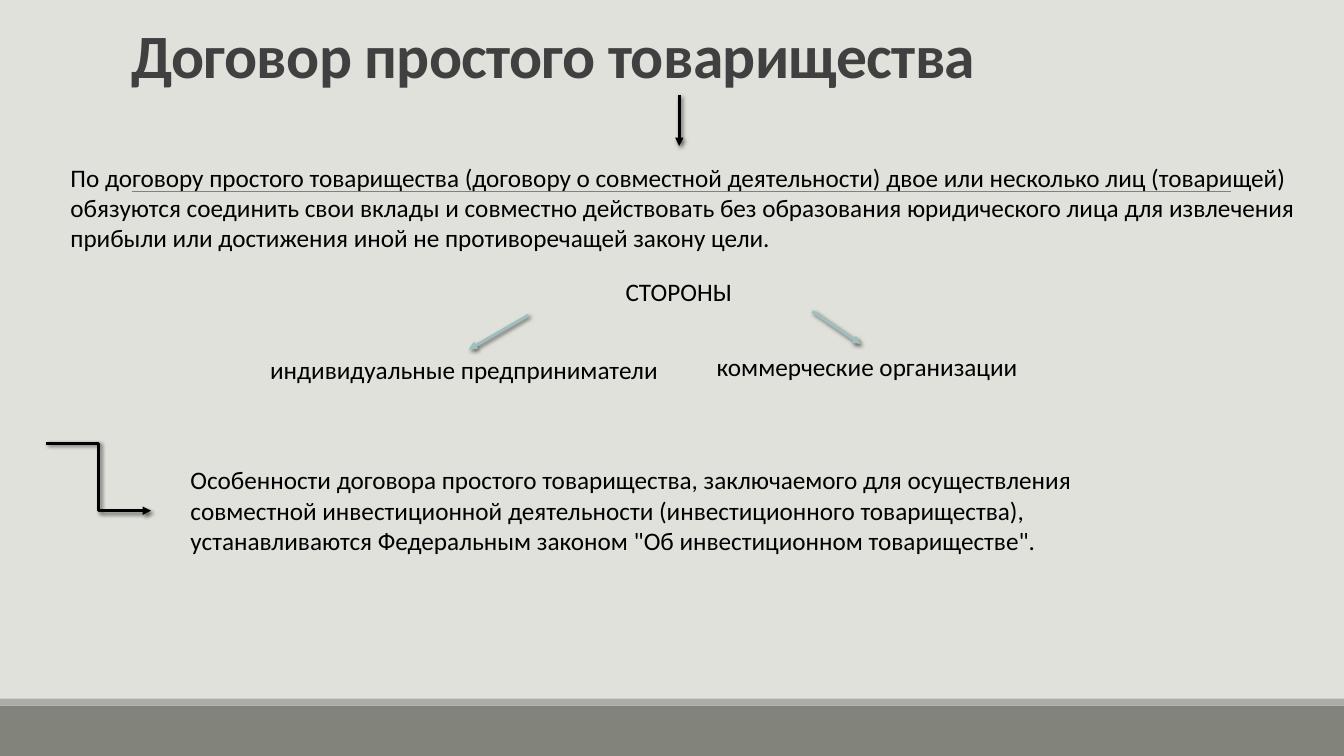
import pptx
import pptx.dml.color
import pptx.enum.shapes
import pptx.enum.text
import pptx.oxml
import pptx.oxml.ns
import pptx.util

Pt = pptx.util.Pt
RGB = pptx.dml.color.RGBColor
CONNECTOR = pptx.enum.shapes.MSO_CONNECTOR
ANCHOR = pptx.enum.text.MSO_ANCHOR
AUTO_SIZE = pptx.enum.text.MSO_AUTO_SIZE

BACKGROUND = RGB(0xE1, 0xE1, 0xDB)
BAND = RGB(0x82, 0x84, 0x7C)
STRIPE = RGB(0xAC, 0xAD, 0xA8)
RULE = RGB(0x80, 0x80, 0x80)
TITLE = RGB(0x40, 0x40, 0x40)
BLACK = RGB(0, 0, 0)
TEAL = RGB(0x9D, 0xBF, 0xBE)

FONT = "Calibri"
WIDTH, HEIGHT = 960, 540
NS = pptx.oxml.ns.nsdecls("a")
SHADOW = (
    f'<a:effectLst {NS}><a:outerShdw blurRad="38100" dist="25400" dir="2700000" rotWithShape="0">'
    '<a:srgbClr val="000000"><a:alpha val="60000"/></a:srgbClr></a:outerShdw></a:effectLst>'
)


def add_line(s, start, end, color, weight, kind=CONNECTOR.STRAIGHT):
    line = s.shapes.add_connector(kind, *(Pt(v) for v in (*start, *end)))
    line.line.color.rgb = color
    line.line.width = Pt(weight)
    return line


def add_rule(s, start, end):
    line = add_line(s, start, end, RULE, 0.5)
    line._element.spPr.append(pptx.oxml.parse_xml(f"<a:effectLst {NS}/>"))


def add_arrow(s, start, end, color, kind=CONNECTOR.STRAIGHT):
    arrow = add_line(s, start, end, color, 2, kind)
    arrow.line._get_or_add_ln().append(
        pptx.oxml.parse_xml(f'<a:tailEnd {NS} type="triangle"/>'))
    arrow._element.spPr.append(pptx.oxml.parse_xml(SHADOW))


def add_bar(s, top, height, color):
    sp = s.shapes.add_shape(pptx.enum.shapes.MSO_SHAPE.RECTANGLE,
                            0, Pt(top), Pt(WIDTH), Pt(height))
    sp.shadow.inherit = False
    sp.fill.solid()
    sp.fill.fore_color.rgb = color
    sp.line.fill.background()


def add_text(s, x, y, w, h, text, wrap=False):
    sp = s.shapes.add_textbox(Pt(x), Pt(y), Pt(w), Pt(h))
    tf = sp.text_frame
    tf.word_wrap = wrap
    tf.auto_size = AUTO_SIZE.SHAPE_TO_FIT_TEXT
    r = tf.paragraphs[0].add_run()
    r.text = text
    r.font.name, r.font.size, r.font.color.rgb = FONT, Pt(18), BLACK


def backdrop(s):
    s.background.fill.solid()
    s.background.fill.fore_color.rgb = BACKGROUND
    add_bar(s, HEIGHT - 36, 36, BAND)
    add_bar(s, HEIGHT - 41, 5, STRIPE)
    add_rule(s, (94.3, 136.8), (879.1, 136.8))


def heading(s, x, y, w, h):
    sp = s.shapes.title
    sp.left, sp.top, sp.width, sp.height = Pt(x), Pt(y), Pt(w), Pt(h)
    tf = sp.text_frame
    tf.word_wrap = True
    tf.auto_size = AUTO_SIZE.NONE
    tf.vertical_anchor = ANCHOR.BOTTOM
    p = tf.paragraphs[0]
    p.alignment = pptx.enum.text.PP_ALIGN.LEFT
    p.line_spacing = 0.85
    r = p.add_run()
    r.text = "Договор простого товарищества"
    r.font.name, r.font.size, r.font.bold = FONT, Pt(44), True
    r.font.color.rgb = TITLE
    r._r.get_or_add_rPr().set("spc", "-50")


def definition(s, x, y, w, h):
    add_arrow(s, (x + 442, y - 44.5), (x + 442, y - 8), BLACK)
    add_text(s, x, y, w, h,
             "По договору простого товарищества (договору о совместной деятельности) "
             "двое или несколько лиц (товарищей) обязуются соединить свои вклады и "
             "совместно действовать без образования юридического лица для извлечения "
             "прибыли или достижения иной не противоречащей закону цели.", wrap=True)


def parties(s, x, y, w):
    add_text(s, x + 254, y, 91.4, 29, "СТОРОНЫ")
    # Branches to the two kinds of parties
    add_arrow(s, (x + 191.5, y + 31.5), (x + 149, y + 56), TEAL)
    add_arrow(s, (x + 394.5, y + 28.8), (x + 429, y + 52), TEAL)
    add_text(s, x, y + 56, 294.5, 29, "индивидуальные предприниматели")
    add_text(s, x + w - 231.8, y + 54, 231.8, 29, "коммерческие организации")


def investment_note(s, x, y, w, h):
    add_arrow(s, (x - 96, y - 11.5), (x - 21, y + 36.5), BLACK, CONNECTOR.ELBOW)
    add_text(s, x, y, w, h,
             "Особенности договора простого товарищества, заключаемого для осуществления "
             "совместной инвестиционной деятельности (инвестиционного товарищества), "
             'устанавливаются Федеральным законом "Об инвестиционном товариществе".',
             wrap=True)


def main():
    prs = pptx.Presentation()
    prs.slide_width, prs.slide_height = Pt(WIDTH), Pt(HEIGHT)
    s = prs.slides.add_slide(prs.slide_layouts[5])
    backdrop(s)
    heading(s, 86.4, 6.5, 797.8, 62)
    definition(s, 43.2, 112.3, 923, 72.7)
    parties(s, 185.8, 193.7, 550.8)
    investment_note(s, 128.9, 328.3, 702, 72.7)
    prs.save("out.pptx")


if __name__ == "__main__":
    main()
